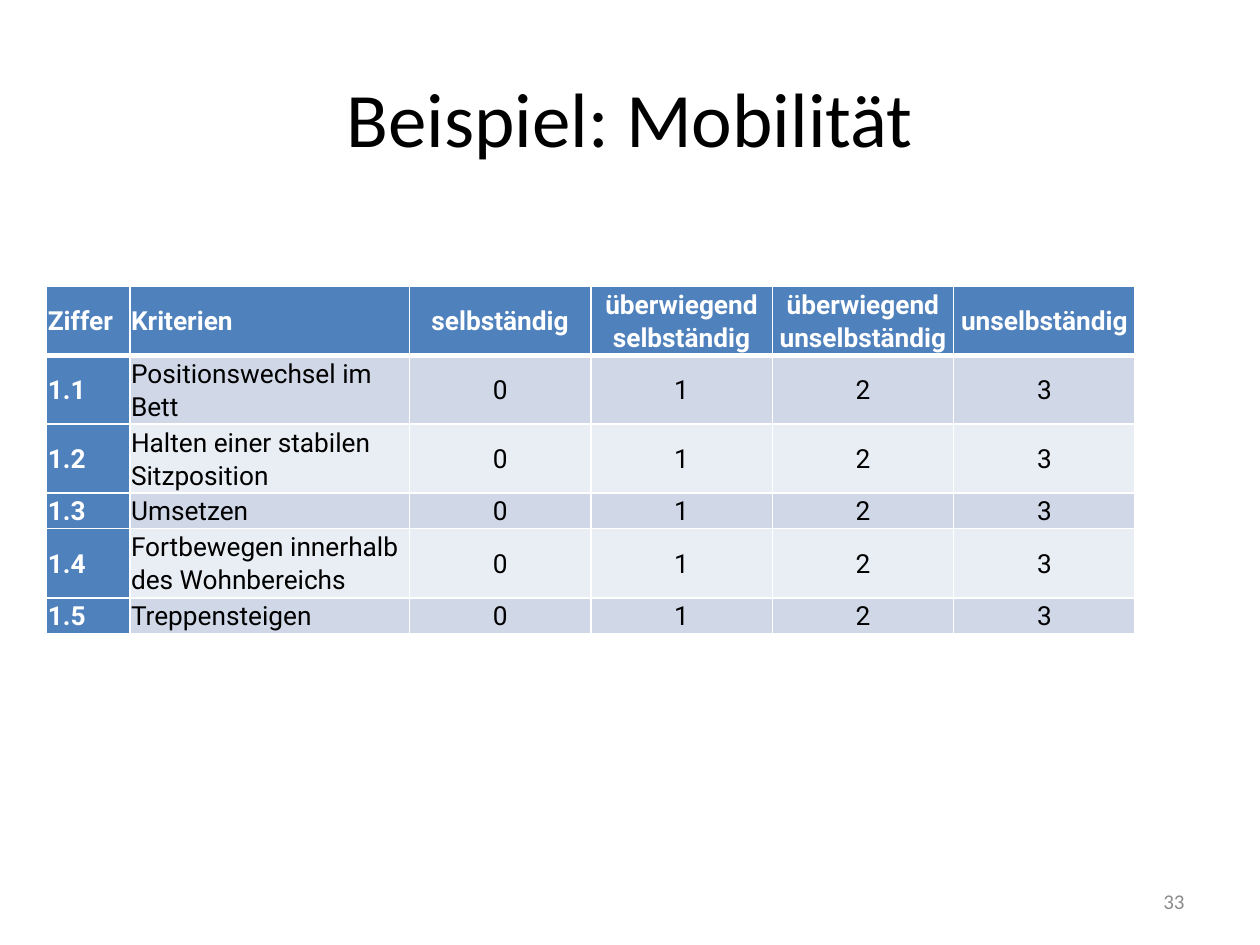
import dataclasses

import lxml.etree
import pptx
import pptx.dml.color
import pptx.enum.text
import pptx.oxml.ns
import pptx.util

Inches, Pt = pptx.util.Inches, pptx.util.Pt
ALIGN = pptx.enum.text.PP_ALIGN
MIDDLE = pptx.enum.text.MSO_ANCHOR.MIDDLE


@dataclasses.dataclass(frozen=True)
class Theme:
    head: str = "4F81BD"
    bands: tuple = ("D0D8E8", "E9EDF4")
    white: str = "FFFFFF"
    black: str = "000000"
    gray: str = "8C8C8C"
    font: str = "Calibri"
    grid: str = "Roboto"
    title: int = 44
    cell: int = 15
    note: int = 12


THEME = Theme()
WIDE, HIGH = 10, 7.5
HEADS = ["Ziffer", "Kriterien", "selbständig", "überwiegend selbständig",
         "überwiegend unselbständig", "unselbständig"]
ITEMS = ["Positionswechsel im Bett", "Halten einer stabilen Sitzposition",
         "Umsetzen", "Fortbewegen innerhalb des Wohnbereichs", "Treppensteigen"]
SCORES = ["0", "1", "2", "3"]
COLS = [0.66, 2.22] + [1.44] * len(SCORES)
ROWS = [0.55, 0.28] * 3


def color(code):
    return pptx.dml.color.RGBColor.from_string(code)


def write(frame, text, font, size, tone, align, bold=False):
    frame.word_wrap = True
    frame.vertical_anchor = MIDDLE
    para = frame.paragraphs[0]
    para.alignment = align
    run = para.add_run()
    run.text = text
    run.font.name = font
    run.font.size = Pt(size)
    run.font.bold = bold
    run.font.color.rgb = color(tone)
    return para


def border(cell, base):
    """Draw white cell edges, with the lower one base points wide."""
    props = cell._tc.get_or_add_tcPr()
    tag = pptx.oxml.ns.qn
    for side, width in zip("LRTB", (1, 1, 1, base)):
        line = lxml.etree.SubElement(props, tag(f"a:ln{side}"), w=str(Pt(width)))
        fill = lxml.etree.SubElement(line, tag("a:solidFill"))
        lxml.etree.SubElement(fill, tag("a:srgbClr"), val=THEME.white)


def style(cell, text, row, col):
    strong = row == 0 or col == 0
    border(cell, 3 if row == 0 else 1)
    cell.fill.solid()
    cell.fill.fore_color.rgb = color(
        THEME.head if strong else THEME.bands[(row - 1) % 2])
    cell.margin_left = cell.margin_right = Inches(0.01)
    cell.margin_top = cell.margin_bottom = Inches(0.01)
    cell.vertical_anchor = MIDDLE
    para = write(cell.text_frame, text, THEME.grid, THEME.cell,
                 THEME.white if strong else THEME.black,
                 ALIGN.LEFT if col < 2 else ALIGN.CENTER, strong)
    para.line_spacing = 1.07
    cell.vertical_anchor = MIDDLE


def add_title(slide, box, text):
    shape = slide.shapes.title
    shape.left, shape.top, shape.width, shape.height = map(Inches, box)
    write(shape.text_frame, text, THEME.font, THEME.title, THEME.black,
          ALIGN.CENTER)


def add_scale(slide, left, top):
    """Place the rating table, sized by its columns and rows."""
    data = [HEADS] + [[f"1.{num}", item] + SCORES
                      for num, item in enumerate(ITEMS, 1)]
    box = map(Inches, (left, top, sum(COLS), sum(ROWS)))
    table = slide.shapes.add_table(len(ROWS), len(COLS), *box).table
    table.horz_banding = False
    for part, width in zip(table.columns, COLS):
        part.width = Inches(width)
    for part, height in zip(table.rows, ROWS):
        part.height = Inches(height)
    for row, line in enumerate(data):
        for col, text in enumerate(line):
            style(table.cell(row, col), text, row, col)


def add_page(slide, box, text):
    shape = slide.shapes.add_textbox(*map(Inches, box))
    write(shape.text_frame, text, THEME.font, THEME.note, THEME.gray,
          ALIGN.RIGHT)


def main():
    deck = pptx.Presentation()
    deck.slide_width, deck.slide_height = Inches(WIDE), Inches(HIGH)
    slide = deck.slides.add_slide(deck.slide_layouts[5])
    edge = WIDE / 20
    add_title(slide, (edge, HIGH * 0.04, WIDE - 2 * edge, HIGH / 6), "Beispiel: Mobilität")
    add_scale(slide, 0.37, 2.27)
    span = WIDE * 0.233
    add_page(slide, (WIDE - edge - span, 6.95, span, 0.4), "33")
    deck.save("out.pptx")


if __name__ == "__main__":
    main()
